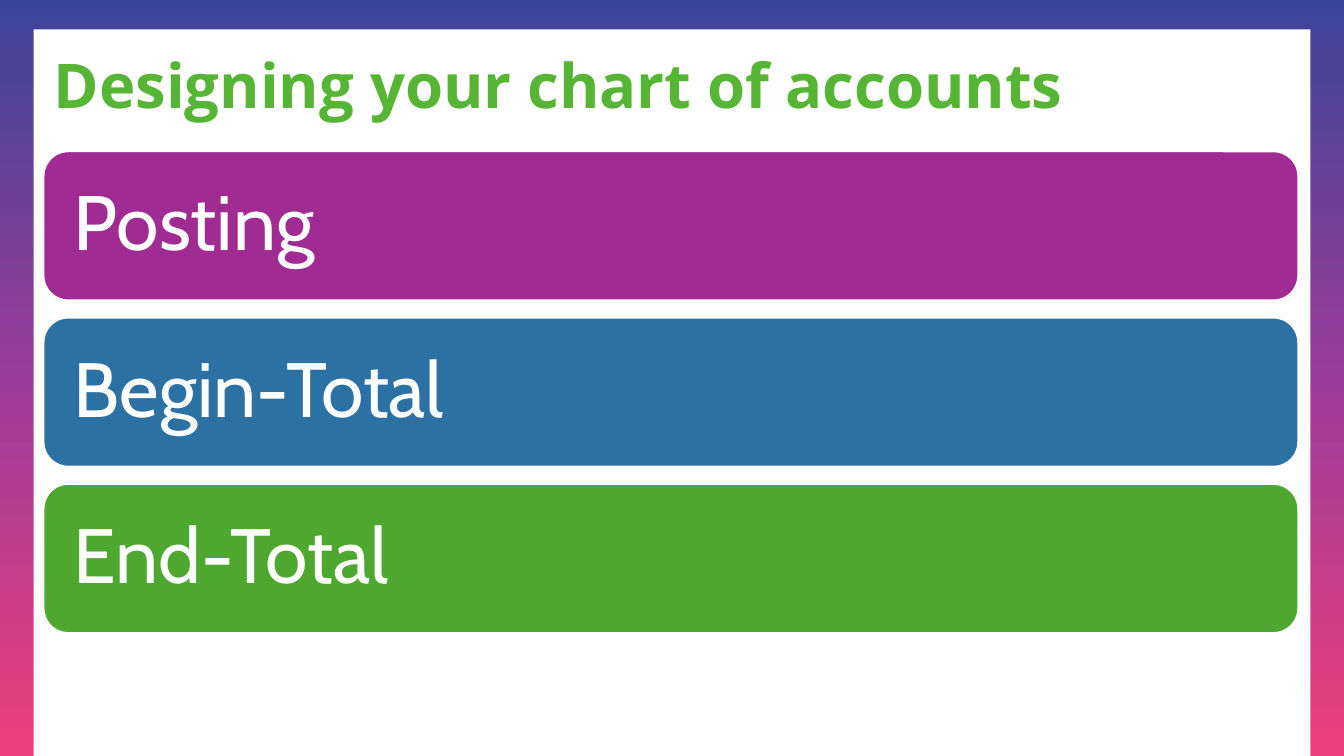
import copy

import pptx
import pptx.dml.color
import pptx.enum.shapes
import pptx.enum.text
import pptx.oxml.ns
import pptx.util

Pt = pptx.util.Pt
SHAPE = pptx.enum.shapes.MSO_SHAPE
COLORS = {
    "pink": "ED3F7B",
    "violet": "9C3C9A",
    "indigo": "3B4598",
    "white": "FFFFFF",
    "title": "57B535",
    "purple": "A02B93",
    "blue": "2C71A4",
    "green": "4EA72E",
}
ACCOUNT_TYPES = [("Posting", "purple"), ("Begin-Total", "blue"), ("End-Total", "green")]


def color(name):
    """Return the named colour."""
    return pptx.dml.color.RGBColor.from_string(COLORS[name])


def add_box(slide, kind, left, top, width, height):
    """Add a shape without shadow or outline."""
    shape = slide.shapes.add_shape(kind, Pt(left), Pt(top), Pt(width), Pt(height))
    shape.shadow.inherit = False
    shape.line.fill.background()
    return shape


def format_text(text_frame, text, font_name, size, color_name, bold=False):
    """Write one left-aligned, vertically centred paragraph."""
    text_frame.text = text
    text_frame.word_wrap = True
    text_frame.auto_size = pptx.enum.text.MSO_AUTO_SIZE.NONE
    text_frame.vertical_anchor = pptx.enum.text.MSO_ANCHOR.MIDDLE
    paragraph = text_frame.paragraphs[0]
    paragraph.alignment = pptx.enum.text.PP_ALIGN.LEFT
    paragraph.line_spacing = 0.9
    font = paragraph.runs[0].font
    font.name = font_name
    font.size = Pt(size)
    font.bold = bold
    font.color.rgb = color(color_name)


def add_backdrop(slide, left, top, width, height):
    """Draw the gradient frame and the white page inside it."""
    frame = add_box(slide, SHAPE.RECTANGLE, left, top, width, height)
    frame.fill.gradient()
    frame.fill.gradient_angle = 270
    stop_list = frame.element.spPr.find(".//" + pptx.oxml.ns.qn("a:gsLst"))
    stop_list.append(copy.deepcopy(stop_list[-1]))
    for index, name in enumerate(("indigo", "violet", "pink")):
        stop = frame.fill.gradient_stops[index]
        stop.position = index / 2
        stop.color.rgb = color(name)
    side, upper = 24, 21
    page = add_box(slide, SHAPE.RECTANGLE, left + side, top + upper,
                   width - 2 * side, height - upper)
    page.fill.solid()
    page.fill.fore_color.rgb = color("white")


def add_account_types(slide, left, top, width, height):
    """Stack one rounded bar per account type in the box."""
    gap = 12.2
    count = len(ACCOUNT_TYPES)
    bar_height = (height - gap * (count - 1)) / count
    for index, (label, fill_name) in enumerate(ACCOUNT_TYPES):
        bar = add_box(slide, SHAPE.ROUNDED_RECTANGLE, left,
                      top + index * (bar_height + gap), width, bar_height)
        bar.fill.solid()
        bar.fill.fore_color.rgb = color(fill_name)
        bar.line.color.rgb = color("white")
        bar.line.width = Pt(1.5)
        text_frame = bar.text_frame
        text_frame.margin_left = text_frame.margin_right = Pt(16.5)
        text_frame.margin_top = text_frame.margin_bottom = Pt(16.5)
        format_text(text_frame, label, "Cabin", 55, "white")


def place_title(slide, left, top, width, height):
    """Format the title and bring it to the front."""
    title = slide.shapes.title
    title.left, title.top = Pt(left), Pt(top)
    title.width, title.height = Pt(width), Pt(height)
    format_text(title.text_frame, "Designing your chart of accounts",
                "Open Sans", 44, "title", bold=True)
    slide.shapes.element.append(title.element)


def main():
    """Build and save the presentation."""
    presentation = pptx.Presentation()
    presentation.slide_width, presentation.slide_height = Pt(960), Pt(540)
    slide = presentation.slides.add_slide(presentation.slide_layouts[5])
    add_backdrop(slide, 0, 0, 960, 540)
    add_account_types(slide, 31, 108, 896.4, 344.2)
    place_title(slide, 31, 28.8, 896.4, 69)
    presentation.save("out.pptx")


if __name__ == "__main__":
    main()
